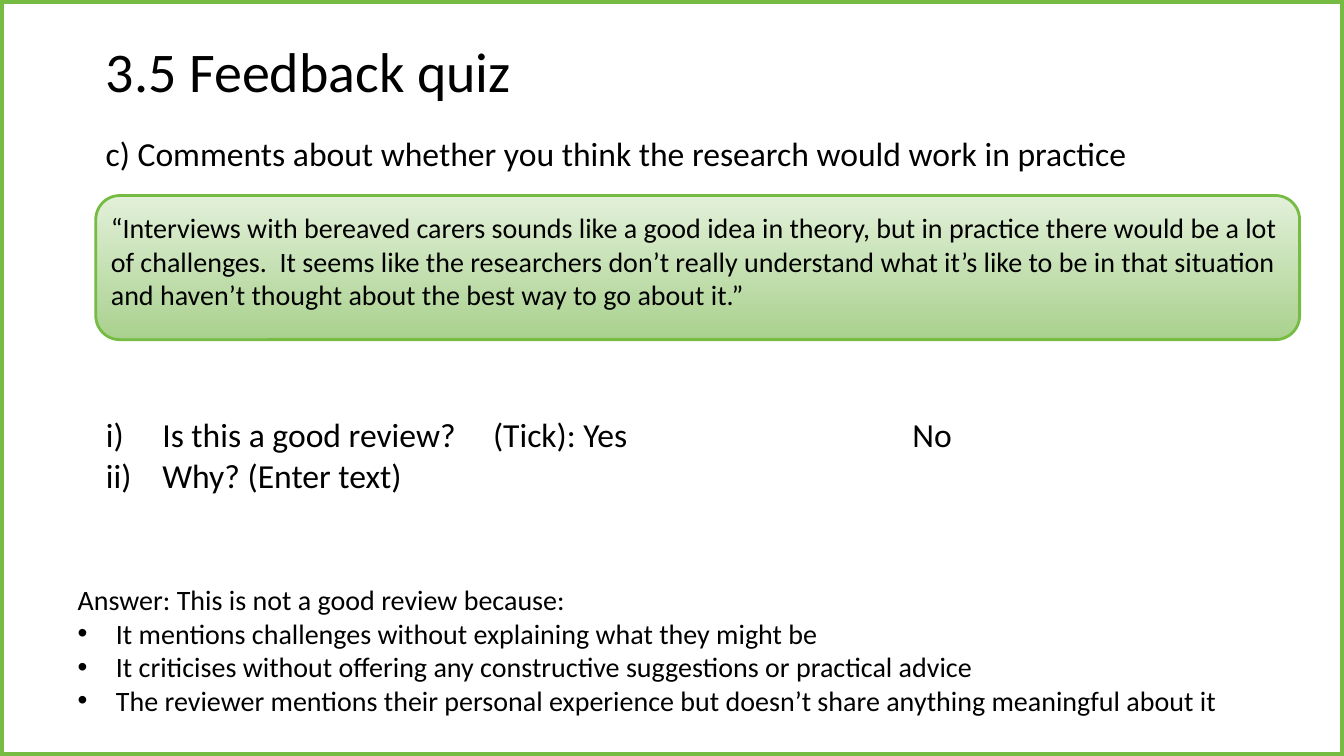
from lxml import etree
from pptx import Presentation
from pptx.dml.color import RGBColor
from pptx.enum import shapes, text
from pptx.oxml import ns
from pptx.util import Inches, Pt

FONT = "Calibri"
BLACK = RGBColor(0x00, 0x00, 0x00)
GREEN = RGBColor(0x76, 0xBC, 0x43)
PALE_GREEN = RGBColor(0xE2, 0xF0, 0xD9)
MID_GREEN = RGBColor(0xA9, 0xD1, 0x8E)
TWO_CONTENT = 3
SLIDE_WIDTH, SLIDE_HEIGHT = 13.33, 7.5
LEFT = 0.95

QUOTE = (
    "“Interviews with bereaved carers sounds like a good idea in theory, "
    "but in practice there would be a lot of challenges.  It seems like the "
    "researchers don’t really understand what it’s like to be in that situation "
    "and haven’t thought about the best way to go about it.”"
)
QUESTIONS = ["Is this a good review?\t(Tick): Yes\tNo", "Why? (Enter text)"]
ANSWER = "Answer: This is not a good review because:"
REASONS = [
    "It mentions challenges without explaining what they might be",
    "It criticises without offering any constructive suggestions or practical advice",
    "The reviewer mentions their personal experience but doesn’t share "
    "anything meaningful about it",
]


def place(item, left, top, width, height):
    item.left, item.top = Inches(left), Inches(top)
    item.width, item.height = Inches(width), Inches(height)


def prepare_frame(item, anchor=text.MSO_ANCHOR.TOP):
    frame = item.text_frame
    frame.word_wrap = True
    frame.auto_size = text.MSO_AUTO_SIZE.NONE
    frame.vertical_anchor = anchor
    return frame


def write(paragraph, words, size, spacing=1.0):
    paragraph.alignment = text.PP_ALIGN.LEFT
    paragraph.line_spacing = spacing
    paragraph.space_before = paragraph.space_after = Pt(0)
    run = paragraph.add_run()
    run.text = words
    run.font.name, run.font.size = FONT, Pt(size)
    run.font.color.rgb = BLACK


def set_marker(paragraph, tag, indent=0.0, tabs=(), **attributes):
    """Set the list marker, its hanging indent and any tab stops."""
    properties = paragraph._p.get_or_add_pPr()
    properties.set("marL", str(Inches(indent)))
    properties.set("indent", str(-Inches(indent)))
    etree.SubElement(properties, ns.qn(tag), attributes)
    if tabs:
        stops = etree.SubElement(properties, ns.qn("a:tabLst"))
        for position in tabs:
            etree.SubElement(stops, ns.qn("a:tab"),
                             pos=str(Inches(position)), algn="l")


def add_outlined(slide, preset, box, line_width):
    outlined = slide.shapes.add_shape(preset, *map(Inches, box))
    outlined.shadow.inherit = False
    outlined.line.color.rgb = GREEN
    outlined.line.width = Pt(line_width)
    return outlined


def fill_answer(answer):
    place(answer, 0.67, 5.73, 11.99, 1.47)
    frame = prepare_frame(answer)
    write(frame.paragraphs[0], ANSWER, 20)
    set_marker(frame.paragraphs[0], "a:buNone")
    for reason in REASONS:
        paragraph = frame.add_paragraph()
        write(paragraph, reason, 20)
        set_marker(paragraph, "a:buChar", 0.38, char="•")


def fill_questions(questions):
    place(questions, LEFT, 4.06, 11.71, 0.99)
    frame = prepare_frame(questions)
    for number, question in enumerate(QUESTIONS):
        paragraph = frame.add_paragraph() if number else frame.paragraphs[0]
        write(paragraph, question, 24)
        set_marker(paragraph, "a:buAutoNum", 0.56, tabs=(3.84, 8),
                   type="romanLcParenR")


def add_quote(slide):
    quote = add_outlined(slide, shapes.MSO_SHAPE.ROUNDED_RECTANGLE,
                         (LEFT, 1.94, 11.94, 1.43), 2)
    quote.fill.gradient()
    quote.fill.gradient_angle = 270
    for stop, color in zip(quote.fill.gradient_stops, (PALE_GREEN, MID_GREEN)):
        stop.color.rgb = color
    frame = prepare_frame(quote)
    frame.margin_left = frame.margin_right = Inches(0.08)
    frame.margin_top = frame.margin_bottom = Inches(0.08)
    write(frame.paragraphs[0], QUOTE, 20)


def add_prompt(slide):
    prompt = slide.shapes.add_textbox(
        Inches(LEFT), Inches(1.27), Inches(11.5), Inches(1.08))
    write(prepare_frame(prompt).paragraphs[0],
          "c) Comments about whether you think the research would work in practice", 24)


def fill_title(title):
    place(title, LEFT, 0.19, 11.5, 1.09)
    frame = prepare_frame(title, text.MSO_ANCHOR.MIDDLE)
    write(frame.paragraphs[0], "3.5 Feedback quiz", 40, 0.9)


def main():
    deck = Presentation()
    deck.slide_width, deck.slide_height = Inches(SLIDE_WIDTH), Inches(SLIDE_HEIGHT)
    slide = deck.slides.add_slide(deck.slide_layouts[TWO_CONTENT])
    title, questions, answer = slide.placeholders

    # Heading and the review to judge
    fill_title(title)
    add_quote(slide)
    add_prompt(slide)

    # Questions and their answer
    fill_questions(questions)
    fill_answer(answer)

    # Slide border
    border = add_outlined(slide, shapes.MSO_SHAPE.RECTANGLE,
                          (0, 0, SLIDE_WIDTH, SLIDE_HEIGHT), 6)
    border.fill.background()

    deck.save("out.pptx")


if __name__ == "__main__":
    main()
